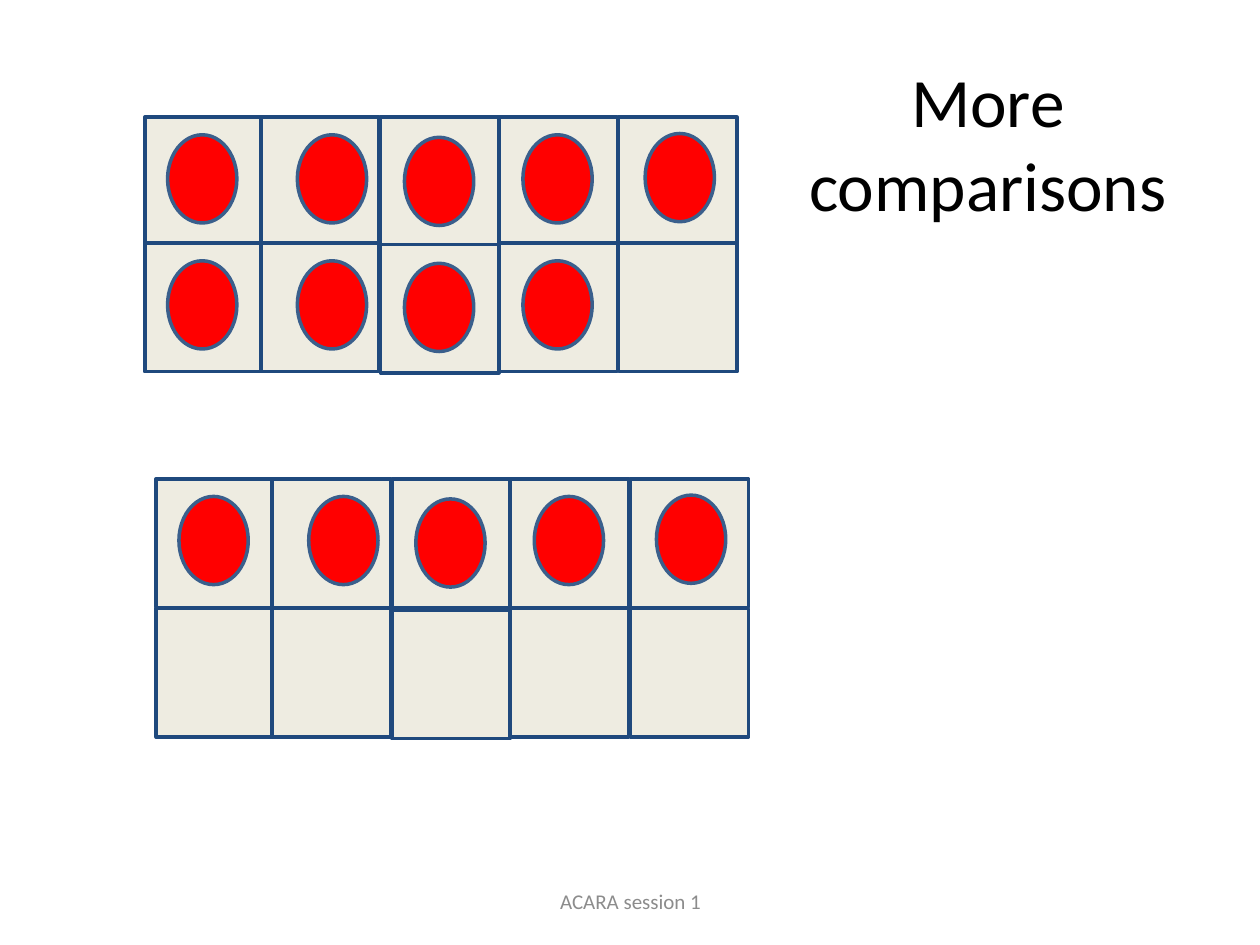
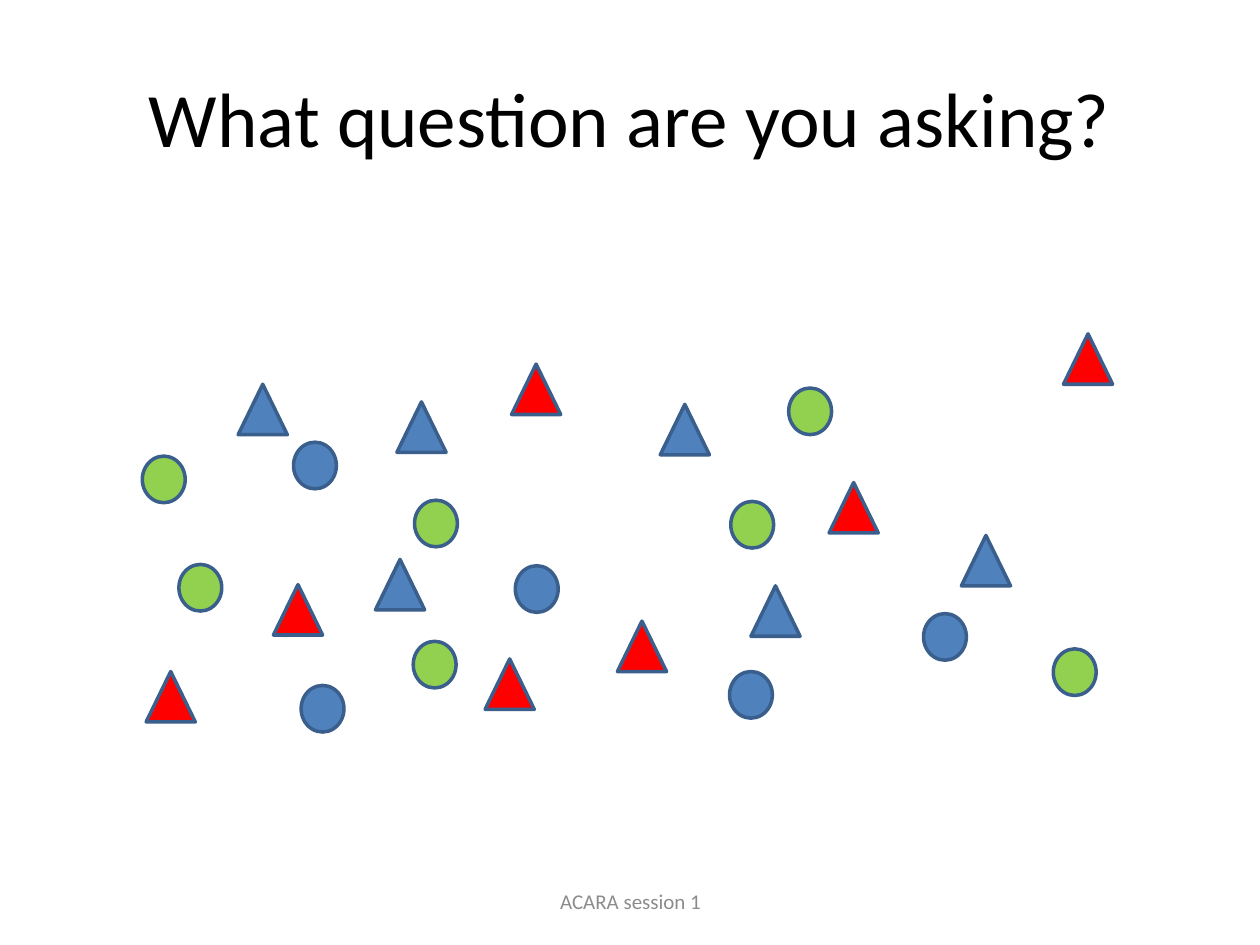
from pptx import Presentation
from pptx.dml.color import RGBColor
from pptx.enum.shapes import MSO_SHAPE as Shape
from pptx.enum.text import MSO_ANCHOR as Anchor, PP_ALIGN as Align
from pptx.util import Inches, Pt

COLUMNS, ROWS = 10, 7.5
UNIT = Inches(1)
BLANK_LAYOUT = 6

BLACK, GREY = "000000", "8C8C8C"
RED, BLUE, GREEN = "FF0000", "4F81BD", "92D050"
CREAM, NAVY, STEEL = "EEECE1", "1F497D", "3A5F8C"

CELL_SIZE = (0.94, 1.02)
COUNTER_SIZE = (0.55, 0.7)
CELL_LEFTS = (0, 0.92, 1.87, 2.81, 3.76)
COUNTER_OFFSETS = ((0.18, 0.14), (1.21, 0.14), (2.06, 0.16), (3, 0.14), (3.97, 0.13))
DRAW_ORDER = (0, 1, 4, 2, 3)
MIDDLE_COLUMN = 2

TOKEN_SIZES = {Shape.OVAL: (0.34, 0.37), Shape.ISOSCELES_TRIANGLE: (0.39, 0.4)}
TOKENS = (
    (Shape.OVAL, BLUE, ((7.33, 4.87), (5.79, 5.33), (4.09, 4.49), (2.39, 5.44), (2.33, 3.51))),
    (Shape.OVAL, GREEN, ((1.13, 3.62), (1.42, 4.48), (6.26, 3.08), (3.29, 3.97),
                         (5.8, 3.98), (8.36, 5.15), (3.28, 5.09))),
    (Shape.ISOSCELES_TRIANGLE, BLUE, ((1.89, 3.05), (7.63, 4.25), (5.24, 3.21),
                                      (5.96, 4.65), (2.98, 4.44), (3.15, 3.19))),
    (Shape.ISOSCELES_TRIANGLE, RED, ((6.58, 3.83), (4.9, 4.93), (4.06, 2.89), (3.85, 5.23),
                                     (2.17, 4.64), (1.16, 5.33), (8.44, 2.65))),
)


def colour(value):
    return RGBColor.from_string(value)


def place(left, top, width, height):
    return [round(length * UNIT) for length in (left, top, width, height)]


def apply_format(target, values):
    for name, value in values.items():
        setattr(target, name, value)


def add_text(page, area, words, size, ink):
    box = page.shapes.add_textbox(*place(*area))
    apply_format(box.text_frame, {"word_wrap": True, "vertical_anchor": Anchor.MIDDLE})
    para = box.text_frame.paragraphs[0]
    para.alignment = Align.CENTER
    span = para.add_run()
    span.text = words
    apply_format(span.font, {"name": "Calibri", "size": Pt(size)})
    span.font.color.rgb = colour(ink)


def add_figure(page, kind, position, size, fill, line):
    figure = page.shapes.add_shape(kind, *place(*position, *size))
    figure.shadow.inherit = False
    figure.fill.solid()
    figure.fill.fore_color.rgb = colour(fill)
    figure.line.color.rgb = colour(line)
    figure.line.width = Pt(2)


def add_frame_row(page, left, top, counters, middle_drop=0):
    for column in DRAW_ORDER:
        drop = middle_drop if column == MIDDLE_COLUMN else 0
        corner = (left + CELL_LEFTS[column], top + drop)
        add_figure(page, Shape.RECTANGLE, corner, CELL_SIZE, CREAM, NAVY)
    for across, down in COUNTER_OFFSETS[:counters]:
        add_figure(page, Shape.OVAL, (left + across, top + down), COUNTER_SIZE, RED, STEEL)


def add_ten_frame(page, left, top, row_pitch, upper, lower):
    add_frame_row(page, left, top, upper)
    add_frame_row(page, left, top + row_pitch, lower, middle_drop=0.01)


def add_page(deck, title, title_area, title_size):
    page = deck.slides.add_slide(deck.slide_layouts[BLANK_LAYOUT])
    add_text(page, title_area, title, title_size, BLACK)
    add_text(page, (3.42, 6.95, 3.17, 0.4), "ACARA session 1", 12, GREY)
    return page


def add_comparison_page(deck):
    page = add_page(deck, "More comparisons", (6.18, 0.3, 3.32, 1.65), 39.6)
    add_ten_frame(page, 1.15, 0.93, row_pitch=1, upper=5, lower=4)
    add_ten_frame(page, 1.24, 3.8, row_pitch=1.03, upper=5, lower=0)


def add_question_page(deck):
    page = add_page(deck, "What question are you asking?", (0.5, 0.3, 9, 1.25), 44)
    for kind, fill, positions in TOKENS:
        for position in positions:
            add_figure(page, kind, position, TOKEN_SIZES[kind], fill, STEEL)


def main():
    deck = Presentation()
    apply_format(deck, {"slide_width": COLUMNS * UNIT, "slide_height": round(ROWS * UNIT)})
    add_comparison_page(deck)
    add_question_page(deck)
    deck.save("out.pptx")


if __name__ == "__main__":
    main()
